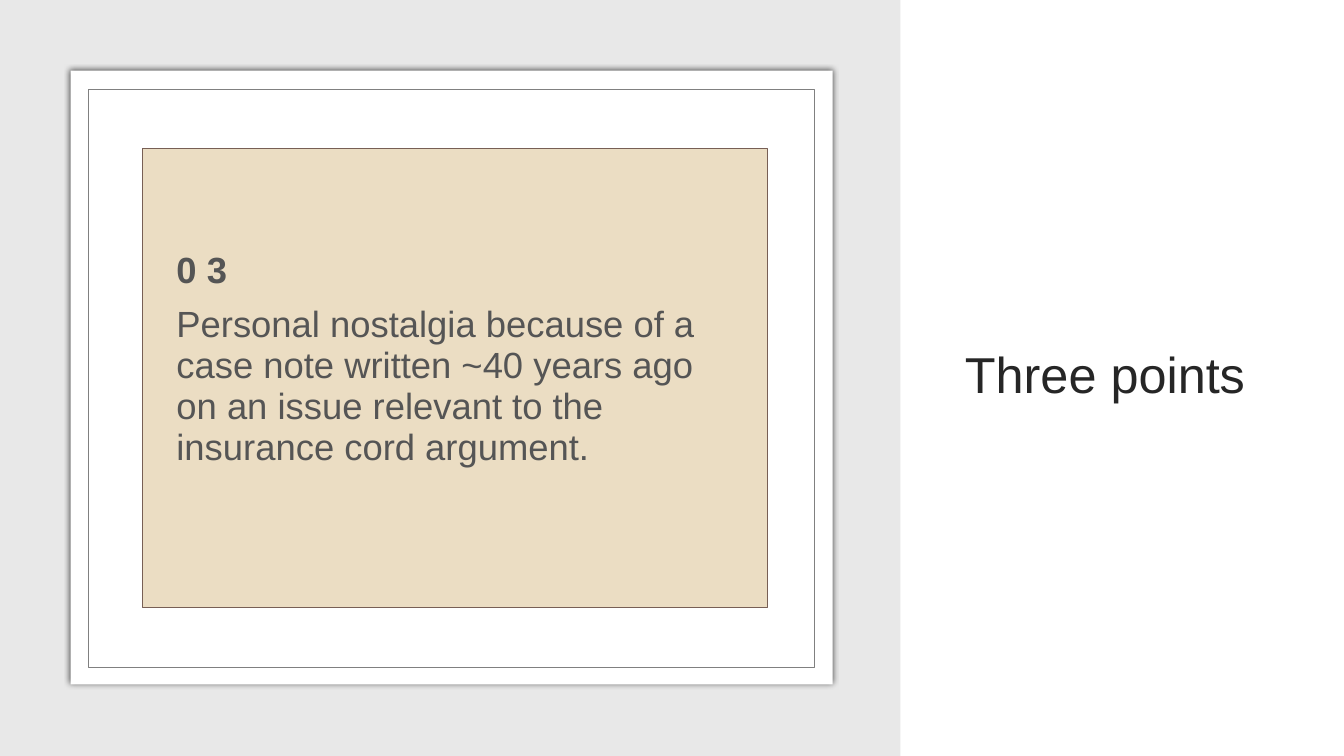
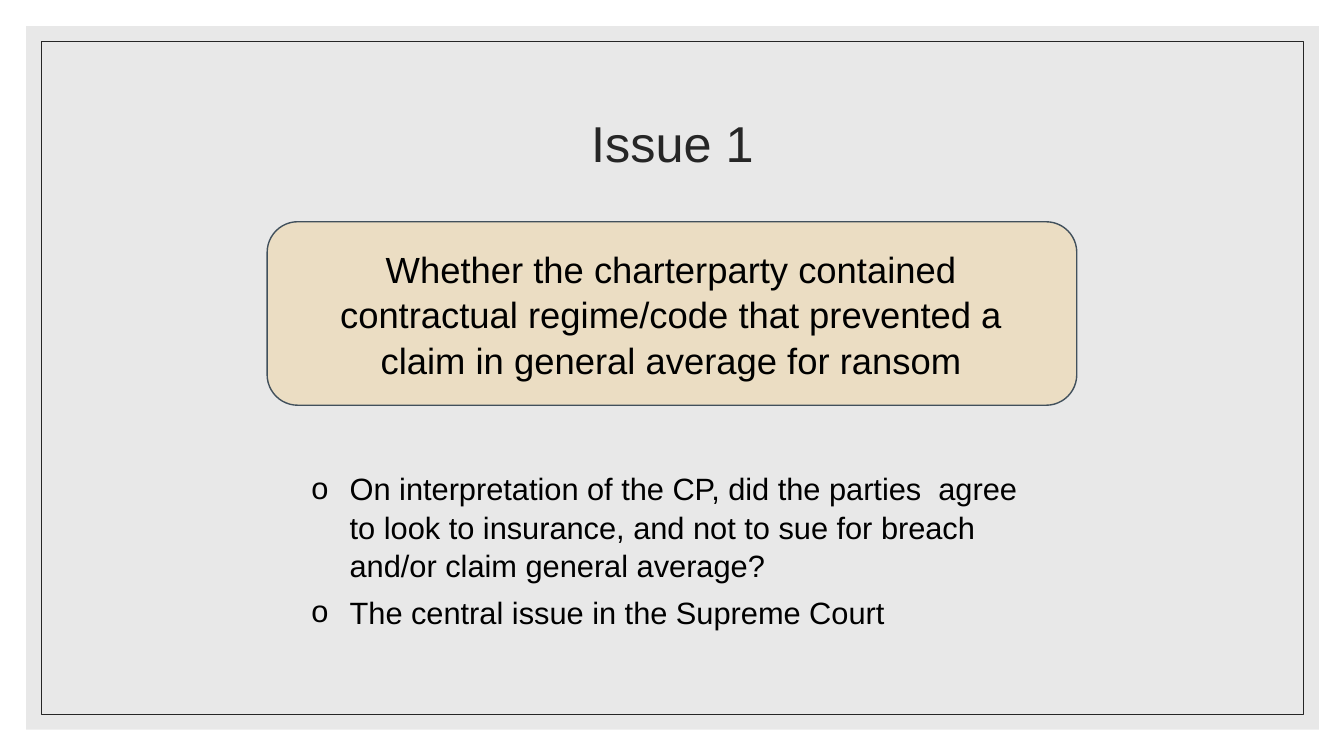
from lxml.etree import SubElement
from pptx import Presentation
from pptx.dml.color import RGBColor
from pptx.enum.shapes import MSO_SHAPE
from pptx.enum.text import MSO_ANCHOR, PP_ALIGN
from pptx.oxml.ns import qn
from pptx.util import Inches, Pt

FONT = "Arial"
WHITE, BLACK = "FFFFFF", "000000"
GREY, DARK, TAN = "D9D9D9", "262626", "EBDDC3"
TITLE_ONLY = 5


def color(value):
    return RGBColor.from_string(value)


def add_box(slide, left, top, width, height, fill=None, line=None, line_width=0.5,
            alpha=None, kind=MSO_SHAPE.RECTANGLE):
    shape = slide.shapes.add_shape(
        kind, Inches(left), Inches(top), Inches(width), Inches(height))
    shape.shadow.inherit = False
    if fill:
        shape.fill.solid()
        shape.fill.fore_color.rgb = color(fill)
    else:
        shape.fill.background()
    if line:
        shape.line.color.rgb = color(line)
        shape.line.width = Pt(line_width)
    else:
        shape.line.fill.background()
    if alpha:
        fill_color = shape.element.spPr.find(qn("a:solidFill"))[0]
        SubElement(fill_color, qn("a:alpha"), val=str(alpha * 1000))
    return shape


def add_glow(shape, value, alpha, blur):
    effects = shape.element.spPr.find(qn("a:effectLst"))
    shadow = SubElement(effects, qn("a:outerShdw"), blurRad=str(Pt(blur)),
                        dist="0", dir="0", algn="ctr", rotWithShape="0")
    shadow_color = SubElement(shadow, qn("a:srgbClr"), val=value)
    SubElement(shadow_color, qn("a:alpha"), val=str(alpha * 1000))


def add_bullet(paragraph, character, indent):
    properties = paragraph._p.get_or_add_pPr()
    properties.set("marL", str(Inches(indent)))
    properties.set("indent", str(-Inches(indent)))
    SubElement(properties, qn("a:buFont"), typeface=FONT)
    SubElement(properties, qn("a:buChar"), char=character)


def write_text(shape, lines, size, value, align=PP_ALIGN.LEFT, anchor=MSO_ANCHOR.MIDDLE,
               spacing=None, after=0, bold_first=False, bullet=None,
               margins=(0.1, 0.05, 0.1, 0.05)):
    frame = shape.text_frame
    frame.word_wrap = True
    frame.vertical_anchor = anchor
    (frame.margin_left, frame.margin_top,
     frame.margin_right, frame.margin_bottom) = map(Inches, margins)
    for index, line in enumerate(lines):
        paragraph = frame.add_paragraph() if index else frame.paragraphs[0]
        paragraph.alignment = align
        paragraph.space_after = Pt(after)
        if spacing:
            paragraph.line_spacing = spacing
        if bullet:
            add_bullet(paragraph, bullet, 0.38)
        run = paragraph.add_run()
        run.text = line
        run.font.name = FONT
        run.font.size = Pt(size)
        run.font.bold = bold_first and index == 0
        run.font.color.rgb = color(value)


def add_text(slide, left, top, width, height, lines, **text_format):
    shape = slide.shapes.add_textbox(
        Inches(left), Inches(top), Inches(width), Inches(height))
    write_text(shape, lines, **text_format)


def set_title(slide, text, left, top, width, height, align=PP_ALIGN.LEFT):
    title = slide.shapes.title
    title.left, title.top = Inches(left), Inches(top)
    title.width, title.height = Inches(width), Inches(height)
    write_text(title, [text], size=36, value=DARK, align=align, spacing=0.9)
    title.element.getparent().append(title.element)


def add_slide(presentation):
    slide = presentation.slides.add_slide(presentation.slide_layouts[TITLE_ONLY])
    slide.background.fill.solid()
    slide.background.fill.fore_color.rgb = color(WHITE)
    return slide


def build_points(presentation):
    slide = add_slide(presentation)
    add_box(slide, 0, 0, 8.93, 7.5, fill=GREY, alpha=60)
    frame = add_box(slide, 0.7, 0.7, 7.56, 6.09, fill=WHITE)
    add_glow(frame, BLACK, alpha=66, blur=4)
    add_box(slide, 0.88, 0.89, 7.2, 5.73, fill=WHITE, line="808080")
    card = add_box(slide, 1.41, 1.47, 6.2, 4.56, fill=TAN, line="775F55")
    write_text(card, [
        "0 3",
        "Personal nostalgia because of a case note written ~40 years ago "
        "on an issue relevant to the insurance cord argument.",
    ], size=26, value="555555", spacing=0.94, after=9.1, bold_first=True,
        margins=(0.34, 0, 0.34, 0.36))
    set_title(slide, "Three points", 9.47, 0.7, 3.16, 6.09)


def build_issue(presentation):
    slide = add_slide(presentation)
    add_box(slide, 0.26, 0.26, 12.82, 6.98, fill=GREY, alpha=60)
    add_box(slide, 0.41, 0.41, 12.52, 6.68, line=DARK)
    set_title(slide, "Issue 1", 1.17, 0.7, 11, 1.5, align=PP_ALIGN.CENTER)
    add_box(slide, 2.65, 2.2, 8.03, 1.82, fill=TAN, line="41505C", line_width=1,
            kind=MSO_SHAPE.ROUNDED_RECTANGLE)
    add_text(slide, 2.99, 1.62, 7.34, 2.98, [
        "Whether the charterparty contained contractual regime/code "
        "that prevented a claim in general average for ransom",
    ], size=26, value=BLACK, align=PP_ALIGN.CENTER, spacing=1.04, after=6)
    add_text(slide, 2.99, 4.6, 7.34, 1.67, [
        "On interpretation of the CP, did the parties  agree to look to insurance, "
        "and not to sue for breach and/or claim general average?",
        "The central issue in the Supreme Court",
    ], size=22, value=BLACK, anchor=MSO_ANCHOR.TOP, spacing=1.04, after=6, bullet="o")


def main():
    presentation = Presentation()
    presentation.slide_width = Inches(13.33)
    presentation.slide_height = Inches(7.5)
    build_points(presentation)
    build_issue(presentation)
    presentation.save("out.pptx")


if __name__ == "__main__":
    main()
